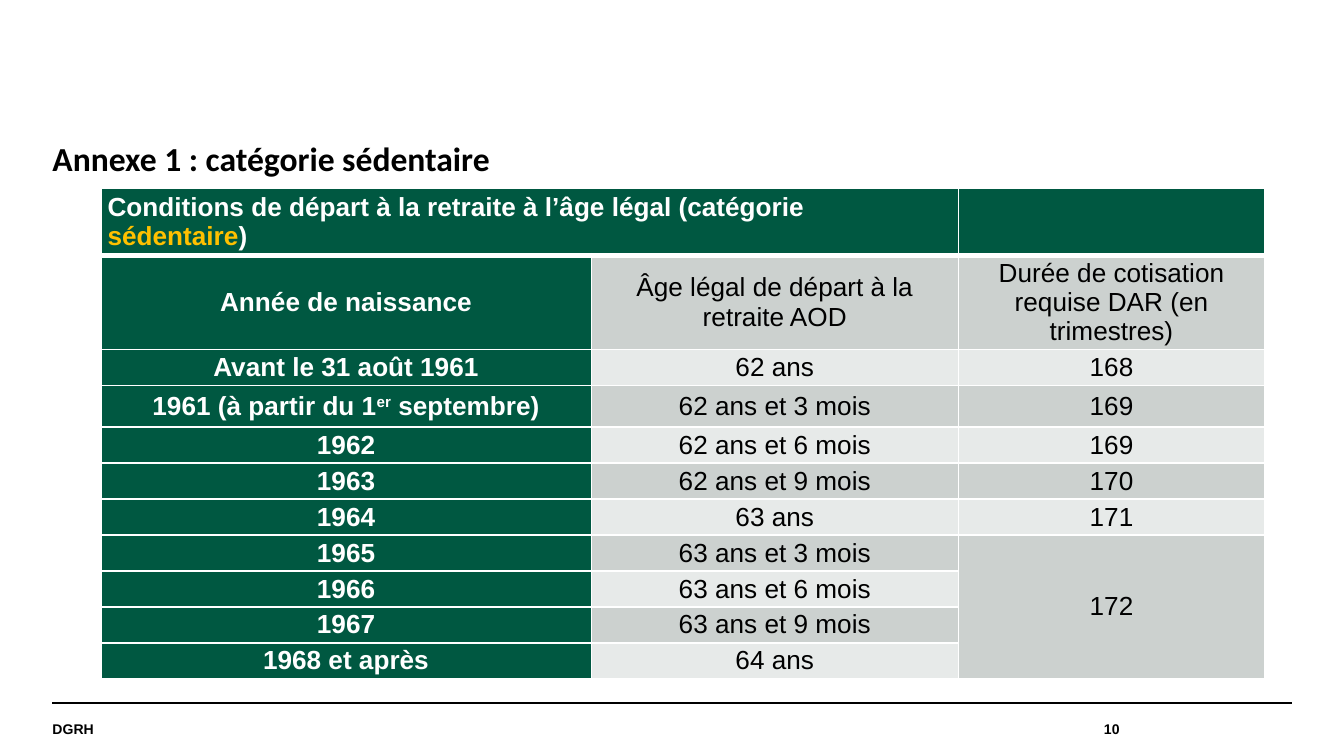
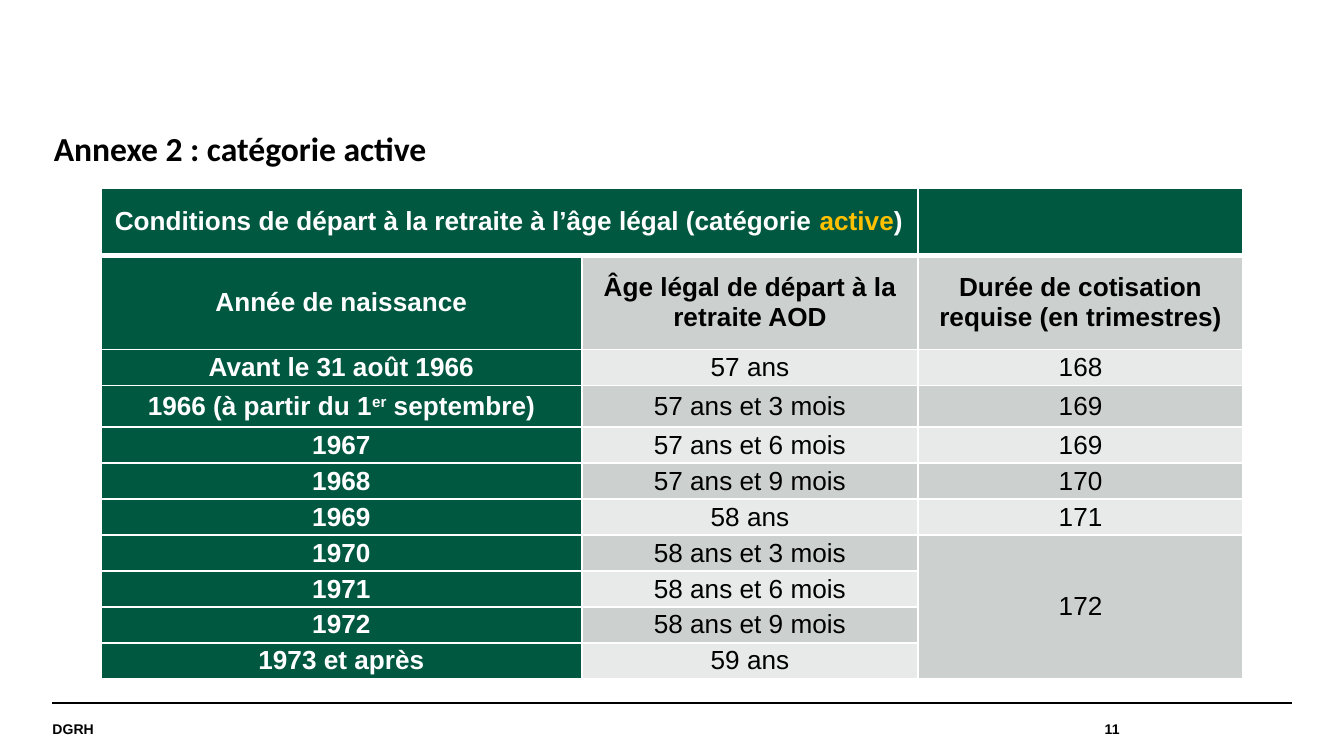
from lxml import etree
from pptx import Presentation
from pptx.dml.color import RGBColor
from pptx.enum import shapes, text
from pptx.oxml import ns
from pptx.util import Pt

GREEN = RGBColor(0x00, 0x58, 0x41)
GREY = RGBColor(0xCC, 0xD1, 0xCF)
LIGHT_GREY = RGBColor(0xE7, 0xEA, 0xE9)
AMBER = RGBColor(0xFF, 0xC0, 0x00)
BLACK = RGBColor(0, 0, 0)
WHITE = RGBColor(0xFF, 0xFF, 0xFF)

MARGIN = 28.1
FOOTER_TOP = 376.6
ROW_HEIGHTS = [36, 50.4, 19.3, 22.3] + [19.3] * 7
DURATIONS = ["168", "169", "169", "170", "171", "172"]  # the last one spans four rows
CENTER = text.PP_ALIGN.CENTER


def format_run(r, size, color, bold=True, font="Arial"):
    r.font.name = font
    r.font.size = Pt(size)
    r.font.bold = bold
    r.font.color.rgb = color


def clear_frame(tf, anchor):
    """Remove the insets and fix wrapping and anchoring."""
    tf.margin_left = tf.margin_right = tf.margin_top = tf.margin_bottom = 0
    tf.word_wrap = True
    tf.auto_size = text.MSO_AUTO_SIZE.NONE
    tf.vertical_anchor = anchor


def add_title(s, title, left, top):
    sp = s.shapes.title
    sp.left, sp.top, sp.width, sp.height = Pt(left), Pt(top), Pt(663.1), Pt(28.1)
    clear_frame(sp.text_frame, text.MSO_ANCHOR.TOP)
    p = sp.text_frame.paragraphs[0]
    p.text = title
    p.alignment = text.PP_ALIGN.JUSTIFY
    p.line_spacing = 1.15
    p.space_after = Pt(3)
    format_run(p.runs[0], 18, BLACK, font="Calibri")


def add_footer_text(s, content, left, width, alignment):
    sp = s.shapes.add_textbox(Pt(left), Pt(FOOTER_TOP), Pt(width), Pt(28.1))
    clear_frame(sp.text_frame, text.MSO_ANCHOR.MIDDLE)
    p = sp.text_frame.paragraphs[0]
    p.text = content
    p.alignment = alignment
    format_run(p.runs[0], 7.5, BLACK)


def add_footer(s, number):
    rule = s.shapes.add_connector(shapes.MSO_CONNECTOR.STRAIGHT, Pt(MARGIN),
                                  Pt(FOOTER_TOP), Pt(720 - MARGIN), Pt(FOOTER_TOP))
    rule.line.color.rgb = BLACK
    rule.line.width = Pt(0.8)
    etree.SubElement(rule.element.spPr, ns.qn("a:effectLst"))
    add_footer_text(s, str(number), 493.2, 106.6, text.PP_ALIGN.RIGHT)
    add_footer_text(s, "DGRH", MARGIN, 465.1, text.PP_ALIGN.LEFT)


def set_borders(cell, top=1, bottom=1):
    tc_pr = cell._tc.get_or_add_tcPr()
    for side, width in (("L", 1), ("R", 1), ("T", top), ("B", bottom)):
        ln = etree.SubElement(tc_pr, ns.qn(f"a:ln{side}"), w=str(Pt(width)))
        fill = etree.SubElement(ln, ns.qn("a:solidFill"))
        etree.SubElement(fill, ns.qn("a:srgbClr"), val=str(WHITE))


def style_cell(cell, row, col):
    set_borders(cell, top=3 if row == 1 else 1, bottom=3 if row == 0 else 1)
    cell.fill.solid()
    if row == 0 or col == 0:
        cell.fill.fore_color.rgb = GREEN
    else:
        cell.fill.fore_color.rgb = GREY if row % 2 else LIGHT_GREY
    cell.margin_left = cell.margin_right = Pt(3.6)
    cell.margin_top = cell.margin_bottom = 0
    cell.vertical_anchor = text.MSO_ANCHOR.MIDDLE


def write_cell(cell, parts, color, bold, alignment=CENTER):
    p = cell.text_frame.paragraphs[0]
    p.alignment = alignment
    for part in parts:
        r = p.add_run()
        r.text = part
        format_run(r, 14, color, bold)
    return p


def age_label(start_age, quarters):
    years, rest = divmod(quarters, 4)
    months = f" et {rest * 3} mois" if rest else ""
    return f"{start_age + years} ans{months}"


def birth_labels(year):
    """Return the text parts of the first column, from the first birth year concerned."""
    return ([[f"Avant le 31 août {year}"], [f"{year} (à partir du 1", "er", " septembre)"]]
            + [[str(year + i)] for i in range(1, 7)] + [[f"{year + 7} et après"]])


def add_retirement_table(s, category, widths, first_year, start_age, duration_head,
                         bold_heads, head_inset):
    frame = s.shapes.add_table(len(ROW_HEIGHTS), 3, Pt(54), Pt(100.8),
                               Pt(sum(widths)), Pt(sum(ROW_HEIGHTS)))
    table = frame.table
    table.horz_banding = False
    for column, width in zip(table.columns, widths):
        column.width = Pt(width)
    for i, height in enumerate(ROW_HEIGHTS):
        table.rows[i].height = Pt(height)
        for j in range(3):
            style_cell(table.cell(i, j), i, j)
    table.cell(0, 0).merge(table.cell(0, 1))
    table.cell(7, 2).merge(table.cell(10, 2))

    heading = table.cell(0, 0)
    heading.margin_left = Pt(head_inset)
    p = write_cell(heading, ["Conditions de départ à la retraite à l’âge légal (catégorie ",
                             category, ")"], WHITE, True, text.PP_ALIGN.LEFT)
    p.runs[1].font.color.rgb = AMBER

    write_cell(table.cell(1, 0), ["Année de naissance"], WHITE, True)
    write_cell(table.cell(1, 1), ["Âge légal de départ à la retraite AOD"], BLACK, bold_heads)
    write_cell(table.cell(1, 2), [duration_head], BLACK, bold_heads)

    for i, parts in enumerate(birth_labels(first_year)):
        p = write_cell(table.cell(i + 2, 0), parts, WHITE, True)
        if len(parts) > 1:
            p.runs[1].font._element.set("baseline", "30000")
        write_cell(table.cell(i + 2, 1), [age_label(start_age, i)], BLACK, False)
    for i, duration in enumerate(DURATIONS):
        write_cell(table.cell(i + 2, 2), [duration], BLACK, False)


def add_annex(prs, number, title, left, top):
    s = prs.slides.add_slide(prs.slide_layouts[5])
    add_title(s, title, left, top)
    add_footer(s, number)
    return s


def main():
    prs = Presentation()
    prs.slide_width, prs.slide_height = Pt(720), Pt(405)

    s = add_annex(prs, 10, "Annexe 1 : catégorie sédentaire", MARGIN, 70.6)
    add_retirement_table(s, "sédentaire", [262.8, 196.6, 164.2], 1961, 62,
                         "Durée de cotisation requise DAR (en trimestres)",
                         bold_heads=False, head_inset=3.6)

    s = add_annex(prs, 11, "Annexe 2 : catégorie active", 28.8, 65.5)
    add_retirement_table(s, "active", [257.8, 180, 174.2], 1966, 57,
                         "Durée de cotisation requise (en trimestres)",
                         bold_heads=True, head_inset=7.5)

    prs.save("out.pptx")


if __name__ == "__main__":
    main()
